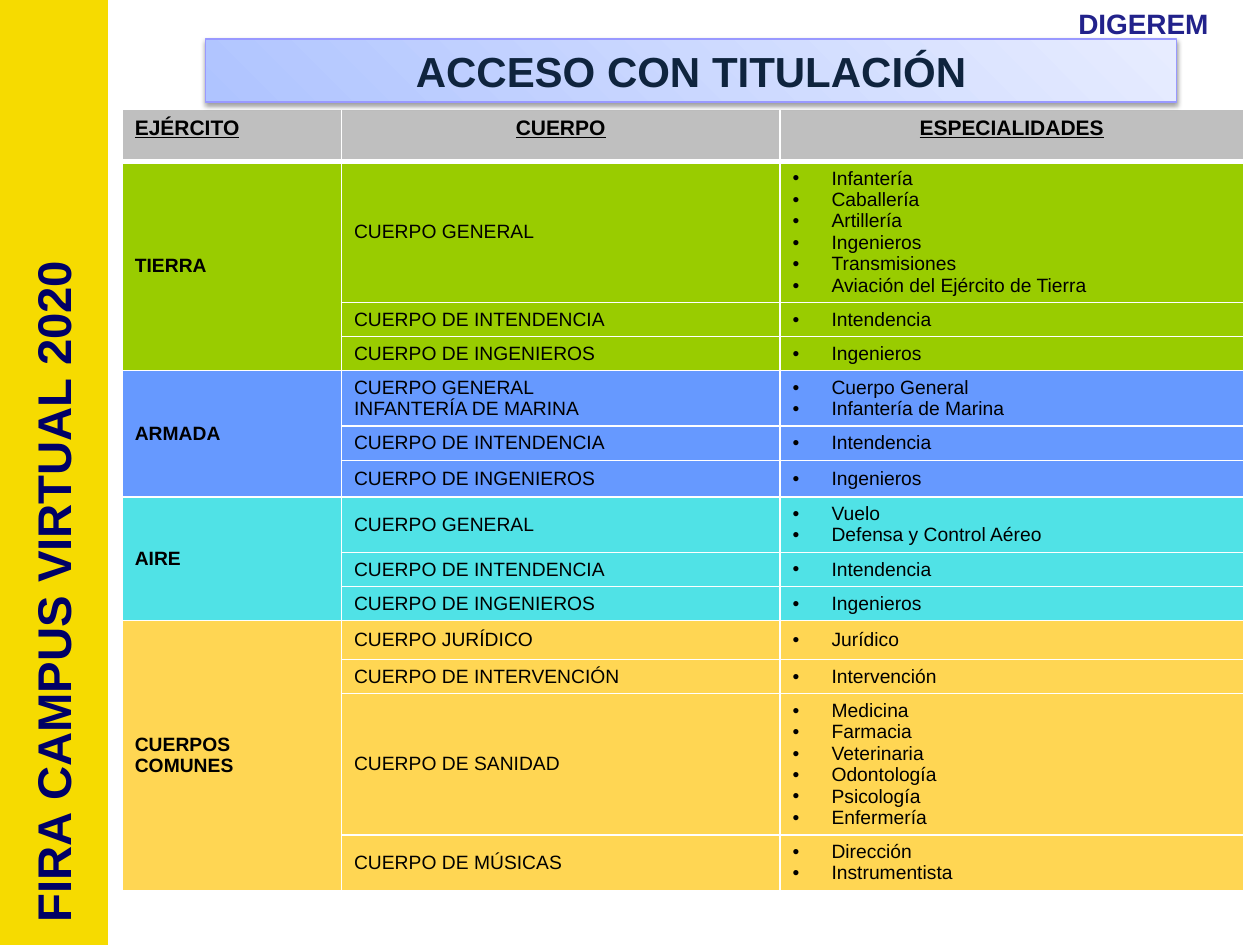
import pptx
import pptx.dml.color
import pptx.enum.shapes
import pptx.enum.text
import pptx.oxml
import pptx.oxml.ns
import pptx.util

Inches = pptx.util.Inches
Pt = pptx.util.Pt
ALIGN = pptx.enum.text.PP_ALIGN
ANCHOR = pptx.enum.text.MSO_ANCHOR
NS = pptx.oxml.ns.nsdecls("a")

COLORS = {
    "band": "F6DB00", "header": "BFBFBF", "tierra": "99CC00", "armada": "6699FF",
    "aire": "50E2E6", "comunes": "FFD653", "border": "FFFFFF", "text": "000000",
    "title": "0F243E", "title_line": "9999FF", "title_from": "AFC4FF",
    "title_to": "E7ECFF", "agency": "22228B", "event": "000066",
}

HEADERS = ["EJÉRCITO", "CUERPO", "ESPECIALIDADES"]
INTENDENCIA = ("CUERPO DE INTENDENCIA", "Intendencia")
INGENIEROS = ("CUERPO DE INGENIEROS", "Ingenieros")
BRANCHES = [
    ("TIERRA", "tierra", [
        ("CUERPO GENERAL", "Infantería\nCaballería\nArtillería\nIngenieros\n"
                           "Transmisiones\nAviación del Ejército de Tierra"),
        INTENDENCIA, INGENIEROS]),
    ("ARMADA", "armada", [
        ("CUERPO GENERAL\nINFANTERÍA DE MARINA", "Cuerpo General\nInfantería de Marina"),
        INTENDENCIA, INGENIEROS]),
    ("AIRE", "aire", [
        ("CUERPO GENERAL", "Vuelo\nDefensa y Control Aéreo"),
        INTENDENCIA, INGENIEROS]),
    ("CUERPOS COMUNES", "comunes", [
        ("CUERPO JURÍDICO", "Jurídico"),
        ("CUERPO DE INTERVENCIÓN", "Intervención"),
        ("CUERPO DE SANIDAD", "Medicina\nFarmacia\nVeterinaria\nOdontología\n"
                              "Psicología\nEnfermería"),
        ("CUERPO DE MÚSICAS", "Dirección\nInstrumentista")]),
]
COL_WIDTHS = [1.74, 3.48, 3.68]
ROW_HEIGHTS = [0.41, 1.12, 0.27, 0.27, 0.44, 0.27, 0.29,
               0.44, 0.27, 0.27, 0.31, 0.27, 1.12, 0.44]


class SlideBuilder:
    font = "Arial"

    def __init__(self, slide):
        self.slide = slide

    def color(self, name):
        return pptx.dml.color.RGBColor.from_string(COLORS[name])

    def set_text(self, tf, text, size, color="text", bold=False, underline=False,
                 align=ALIGN.LEFT, bullets=False):
        tf.text = text
        tf.word_wrap = True
        for p in tf.paragraphs:
            p.alignment = align
            if bullets:
                pPr = p._p.get_or_add_pPr()
                pPr.set("marL", str(Inches(0.31)))
                pPr.set("indent", str(-Inches(0.31)))
                pPr.append(pptx.oxml.parse_xml(f'<a:buFont {NS} typeface="Arial"/>'))
                pPr.append(pptx.oxml.parse_xml(f'<a:buChar {NS} char="•"/>'))
            for r in p.runs:
                r.font.name = self.font
                r.font.size = Pt(size)
                r.font.bold = bold
                r.font.underline = underline
                r.font.color.rgb = self.color(color)

    def rect(self, left, top, width, height, line):
        sp = self.slide.shapes.add_shape(
            pptx.enum.shapes.MSO_SHAPE.RECTANGLE,
            Inches(left), Inches(top), Inches(width), Inches(height))
        sp.shadow.inherit = False
        sp.line.color.rgb = self.color(line)
        sp.line.width = Pt(0.75)
        return sp

    def band(self, left, top, width, height, color):
        sp = self.rect(left, top, width, height, color)
        sp.fill.solid()
        sp.fill.fore_color.rgb = self.color(color)

    def title(self, left, top, width, height, text):
        sp = self.rect(left, top, width, height, "title_line")
        sp.fill.gradient()
        sp.fill.gradient_angle = 45
        for stop, name in zip(sp.fill.gradient_stops, ("title_from", "title_to")):
            stop.color.rgb = self.color(name)
        effects = sp._element.spPr.find(pptx.oxml.ns.qn("a:effectLst"))
        effects.append(pptx.oxml.parse_xml(
            f'<a:outerShdw {NS} blurRad="{Pt(3.1)}" dist="{Pt(1.6)}" dir="5400000" '
            'rotWithShape="0"><a:srgbClr val="000000"><a:alpha val="38000"/>'
            '</a:srgbClr></a:outerShdw>'))
        self.set_text(sp.text_frame, text, 24, "title", bold=True, align=ALIGN.CENTER)

    def label(self, left, top, width, height, text, size, color, rotation=0):
        sp = self.slide.shapes.add_textbox(
            Inches(left), Inches(top), Inches(width), Inches(height))
        sp.rotation = rotation
        self.set_text(sp.text_frame, text, size, color, bold=True, align=ALIGN.CENTER)

    def style_cell(self, cell, fill, top=1, bottom=1):
        tcPr = cell._tc.get_or_add_tcPr()
        for side, width in (("L", 1), ("R", 1), ("T", top), ("B", bottom)):
            tcPr.append(pptx.oxml.parse_xml(
                f'<a:ln{side} {NS} w="{Pt(width)}"><a:solidFill>'
                f'<a:srgbClr val="{COLORS["border"]}"/></a:solidFill></a:ln{side}>'))
        cell.fill.solid()
        cell.fill.fore_color.rgb = self.color(fill)

    def table(self, left, top):
        table = self.slide.shapes.add_table(
            len(ROW_HEIGHTS), len(COL_WIDTHS), Inches(left), Inches(top),
            Inches(sum(COL_WIDTHS)), Inches(sum(ROW_HEIGHTS))).table
        table.first_row = False
        table.horz_banding = False
        for column, width in zip(table.columns, COL_WIDTHS):
            column.width = Inches(width)
        for row, height in zip(table.rows, ROW_HEIGHTS):
            row.height = Inches(height)

        for col, text in enumerate(HEADERS):
            cell = table.cell(0, col)
            self.style_cell(cell, "header", bottom=3)
            self.set_text(cell.text_frame, text, 12, bold=True, underline=True,
                          align=ALIGN.CENTER if col else ALIGN.LEFT)

        row = 1
        for branch, fill, corps in BRANCHES:
            first = row
            for name, specialties in corps:
                for col in range(len(COL_WIDTHS)):
                    cell = table.cell(row, col)
                    self.style_cell(cell, fill, top=3 if row == 1 else 1)
                    cell.vertical_anchor = ANCHOR.MIDDLE
                self.set_text(table.cell(row, 1).text_frame, name, 11)
                self.set_text(table.cell(row, 2).text_frame, specialties, 11, bullets=True)
                row += 1
            table.cell(first, 0).merge(table.cell(row - 1, 0))
            self.set_text(table.cell(first, 0).text_frame, branch, 11, bold=True)


def main():
    prs = pptx.Presentation()
    prs.slide_width = Inches(10)
    prs.slide_height = Inches(7.5)
    s = SlideBuilder(prs.slides.add_slide(prs.slide_layouts[6]))
    s.band(0, 0, 0.85, 7.5, "band")
    s.table(0.97, 0.87)
    s.title(1.63, 0.31, 7.71, 0.5, "ACCESO CON TITULACIÓN")
    s.label(8.15, 0, 1.85, 0.37, "DIGEREM", 16, "agency")
    s.label(-2.41, 4.41, 5.67, 0.57, "FIRA CAMPUS VIRTUAL 2020", 27, "event", rotation=270)
    prs.save("out.pptx")


if __name__ == "__main__":
    main()
